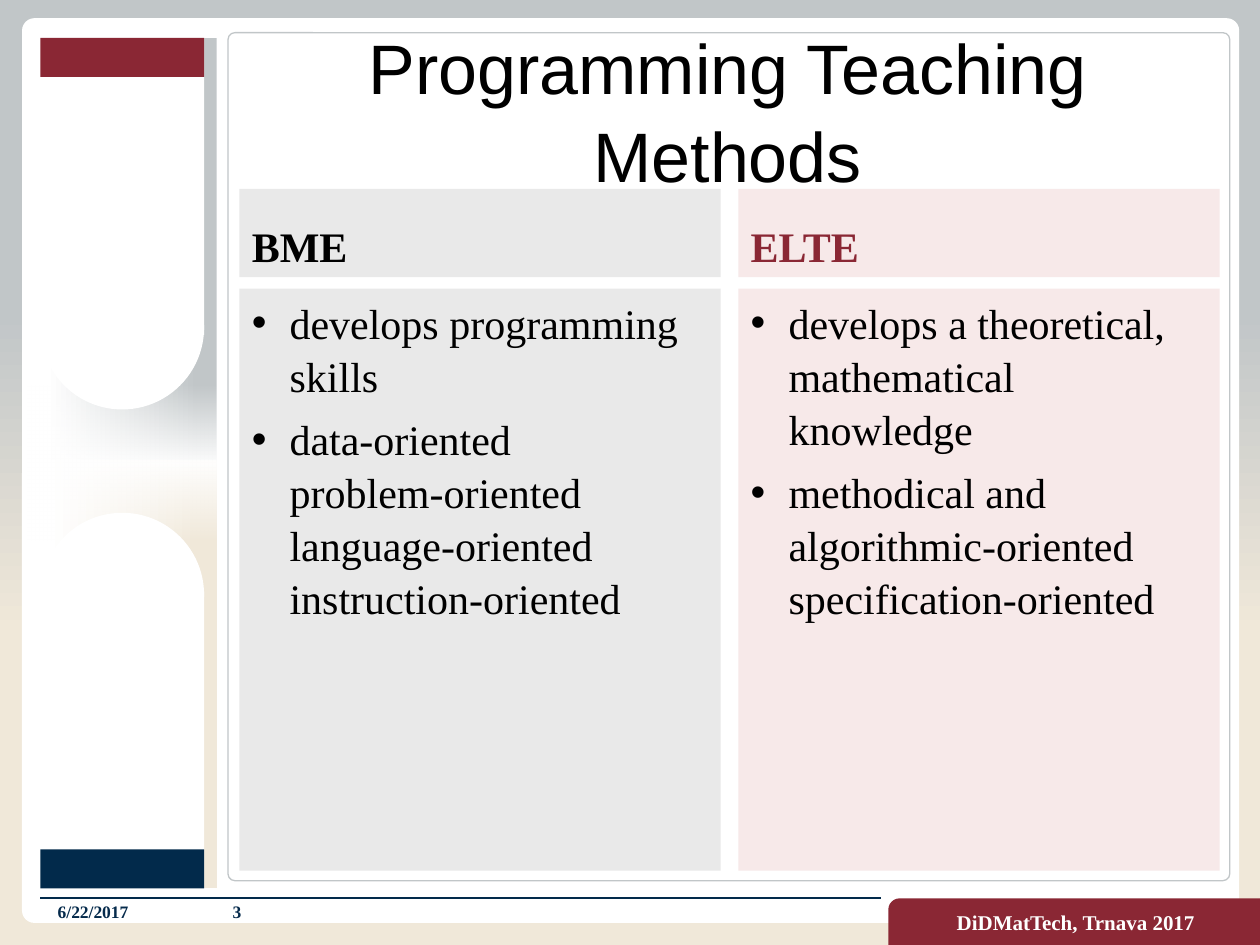
from lxml import etree
from pptx import Presentation
from pptx.dml.color import RGBColor
from pptx.enum.shapes import MSO_CONNECTOR, MSO_SHAPE as SHAPE
from pptx.enum.text import MSO_ANCHOR as ANCHOR, MSO_AUTO_SIZE, PP_ALIGN as ALIGN
from pptx.oxml.ns import qn
from pptx.util import Inches, Pt

GRAY = RGBColor(0xC1, 0xC6, 0xC8)
BEIGE = RGBColor(0xF0, 0xE8, 0xD9)
WHITE = RGBColor(0xFF, 0xFF, 0xFF)
BLACK = RGBColor(0, 0, 0)
WINE = RGBColor(0x8A, 0x27, 0x34)
NAVY = RGBColor(0x02, 0x2A, 0x4B)
FOOTER_NAVY = RGBColor(0x05, 0x2A, 0x4B)
LIGHT_GRAY = RGBColor(0xE9, 0xE9, 0xE9)
LIGHT_PINK = RGBColor(0xF7, 0xE9, 0xE9)
SERIF = "Times New Roman"
LINE_SPACING = 1.05


def set_gradient(fill, properties, stops, angle):
    """Fill with stops of (position %, colour, opacity %)."""
    fill.solid()
    gradient = etree.Element(qn("a:gradFill"), rotWithShape="1")
    stop_list = etree.SubElement(gradient, qn("a:gsLst"))
    for position, color, opacity in stops:
        stop = etree.SubElement(stop_list, qn("a:gs"), pos=str(position * 1000))
        rgb = etree.SubElement(stop, qn("a:srgbClr"), val=str(color))
        if opacity < 100:
            etree.SubElement(rgb, qn("a:alpha"), val=str(opacity * 1000))
    etree.SubElement(gradient, qn("a:lin"), ang=str(angle * 60000), scaled="0")
    solid = properties.find(qn("a:solidFill"))
    properties.replace(solid, gradient)


def add_block(slide, kind, box, color, border=None, corner=None):
    block = slide.shapes.add_shape(kind, *map(Inches, box))
    block.shadow.inherit = False
    block.fill.solid()
    block.fill.fore_color.rgb = color
    if border is None:
        block.line.fill.background()
    else:
        block.line.color.rgb = border
        block.line.width = Pt(0.75)
    if corner is not None:
        block.adjustments[0] = corner
    return block


def write(shape, paragraphs, size, color, bold=False, font=SERIF,
          align=ALIGN.LEFT, anchor=ANCHOR.MIDDLE, indent=None):
    frame = shape.text_frame
    frame.word_wrap = True
    frame.auto_size = MSO_AUTO_SIZE.NONE
    frame.vertical_anchor = anchor
    for i, text in enumerate(paragraphs):
        paragraph = frame.add_paragraph() if i else frame.paragraphs[0]
        paragraph.text = text
        paragraph.alignment = align
        paragraph.line_spacing = LINE_SPACING
        paragraph.space_before = Pt(6 if i else 0)
        if indent:
            properties = paragraph._p.get_or_add_pPr()
            properties.set("marL", str(Inches(indent)))
            properties.set("indent", str(-Inches(indent)))
            etree.SubElement(properties, qn("a:buFont"), typeface="Arial")
            etree.SubElement(properties, qn("a:buChar"), char="•")
        for run in paragraph.runs:
            run.font.name = font
            run.font.size = Pt(size)
            run.font.bold = bold
            run.font.color.rgb = color


def add_sidebar(slide, left, top, width, height):
    # Shaded backing with a white glow across the middle
    glow = [(35, WHITE, 0), (50, WHITE, 95), (65, WHITE, 0)]
    shades = [
        (top, 3.39, [(10, GRAY, 100), (90, WHITE, 100)], 180),
        (top + 3.35, 3.4, [(10, WHITE, 100), (90, BEIGE, 100)], 0),
        (top + 1.31, 4.13, glow, 90),
    ]
    for y, shade_height, stops, angle in shades:
        shade = add_block(slide, SHAPE.RECTANGLE,
                          (left, y, width, shade_height), WHITE)
        set_gradient(shade.fill, shade._element.spPr, stops, angle)

    # White tabs with rounded ends and coloured caps
    tab_left, tab_width, tab_height, cap = left + 0.1, 1.3, 2.36, 0.31
    bottom = top + height
    for y, h, kind, color in [
        (top, tab_height, SHAPE.RECTANGLE, WHITE),
        (bottom - tab_height, tab_height, SHAPE.RECTANGLE, WHITE),
        (top + 1.65, tab_width, SHAPE.OVAL, WHITE),
        (top + 3.77, tab_width, SHAPE.OVAL, WHITE),
        (top, cap, SHAPE.RECTANGLE, WINE),
        (bottom - cap, cap, SHAPE.RECTANGLE, NAVY),
    ]:
        add_block(slide, kind, (tab_left, y, tab_width, h), color)


def add_title(slide, left, top, width, height):
    title = slide.shapes.title
    title.left, title.top = Inches(left), Inches(top)
    title.width, title.height = Inches(width), Inches(height)
    write(title, ["Programming Teaching Methods"], 40, BLACK,
          font="Arial", align=ALIGN.CENTER)
    # Bring the title in front of the white panel
    slide.shapes._spTree.append(title._element)


def add_column(slide, left, top, width, height, school, points, tint, color):
    heading_height, gap = 0.7, 0.09
    heading = add_block(slide, SHAPE.RECTANGLE,
                        (left, top, width, heading_height), tint)
    write(heading, [school], 24, color, bold=True, anchor=ANCHOR.BOTTOM)
    offset = heading_height + gap
    body = add_block(slide, SHAPE.RECTANGLE,
                     (left, top + offset, width, height - offset), tint)
    write(body, points, 24, BLACK, anchor=ANCHOR.TOP, indent=0.3)


def add_footer(slide, left, top, right, bottom):
    rule = slide.shapes.add_connector(
        MSO_CONNECTOR.STRAIGHT, Inches(left), Inches(top), Inches(6.99), Inches(top))
    rule.line.color.rgb = NAVY
    rule.line.width = Pt(1.25)
    etree.SubElement(rule._element.spPr, qn("a:effectLst"))

    # Conference tab, rounded at its upper left
    conference = add_block(slide, SHAPE.ROUND_1_RECTANGLE,
                           (right - 2.95, top, 2.95, bottom - top), WINE, corner=0.244)
    conference._element.spPr.find(qn("a:xfrm")).set("flipH", "1")
    write(conference, ["DiDMatTech, Trnava 2017"], 12, WHITE, bold=True,
          align=ALIGN.CENTER)

    # Date and slide number
    for x, text, align in [(left + 0.04, "6/22/2017", ALIGN.LEFT),
                           (left + 1.07, "3", ALIGN.CENTER)]:
        label = slide.shapes.add_textbox(
            Inches(x), Inches(top), Inches(0.98), Inches(0.2))
        write(label, [text], 10, FOOTER_NAVY, bold=True, align=align)


def main():
    prs = Presentation()
    prs.slide_width, prs.slide_height = Inches(10), Inches(7.5)
    slide = prs.slides.add_slide(prs.slide_layouts[5])

    # Background and white frame
    background = slide.background.fill
    background.solid()
    set_gradient(background, slide._element.find(".//" + qn("p:bgPr")),
                 [(33, GRAY, 100), (67, BEIGE, 100)], 90)
    add_block(slide, SHAPE.ROUNDED_RECTANGLE, (0.18, 0.15, 9.65, 7.17),
              WHITE, WHITE, 0.013)
    add_sidebar(slide, 0.22, 0.3, 1.5, 6.75)
    add_block(slide, SHAPE.ROUNDED_RECTANGLE, (1.81, 0.26, 7.95, 6.73),
              WHITE, GRAY, 0.008)

    # Content
    add_title(slide, 1.84, 0.31, 7.87, 1.1)
    columns = [
        ("BME",
         ["develops programming skills",
          "data-oriented\vproblem-oriented\vlanguage-oriented\vinstruction-oriented"],
         LIGHT_GRAY, BLACK),
        ("ELTE",
         ["develops a theoretical, mathematical knowledge",
          "methodical and algorithmic-oriented\vspecification-oriented"],
         LIGHT_PINK, WINE),
    ]
    for i, column in enumerate(columns):
        add_column(slide, 1.9 + i * 3.96, 1.5, 3.82, 5.41, *column)
    add_footer(slide, 0.32, 7.13, 10, 7.5)
    prs.save("out.pptx")


if __name__ == "__main__":
    main()
